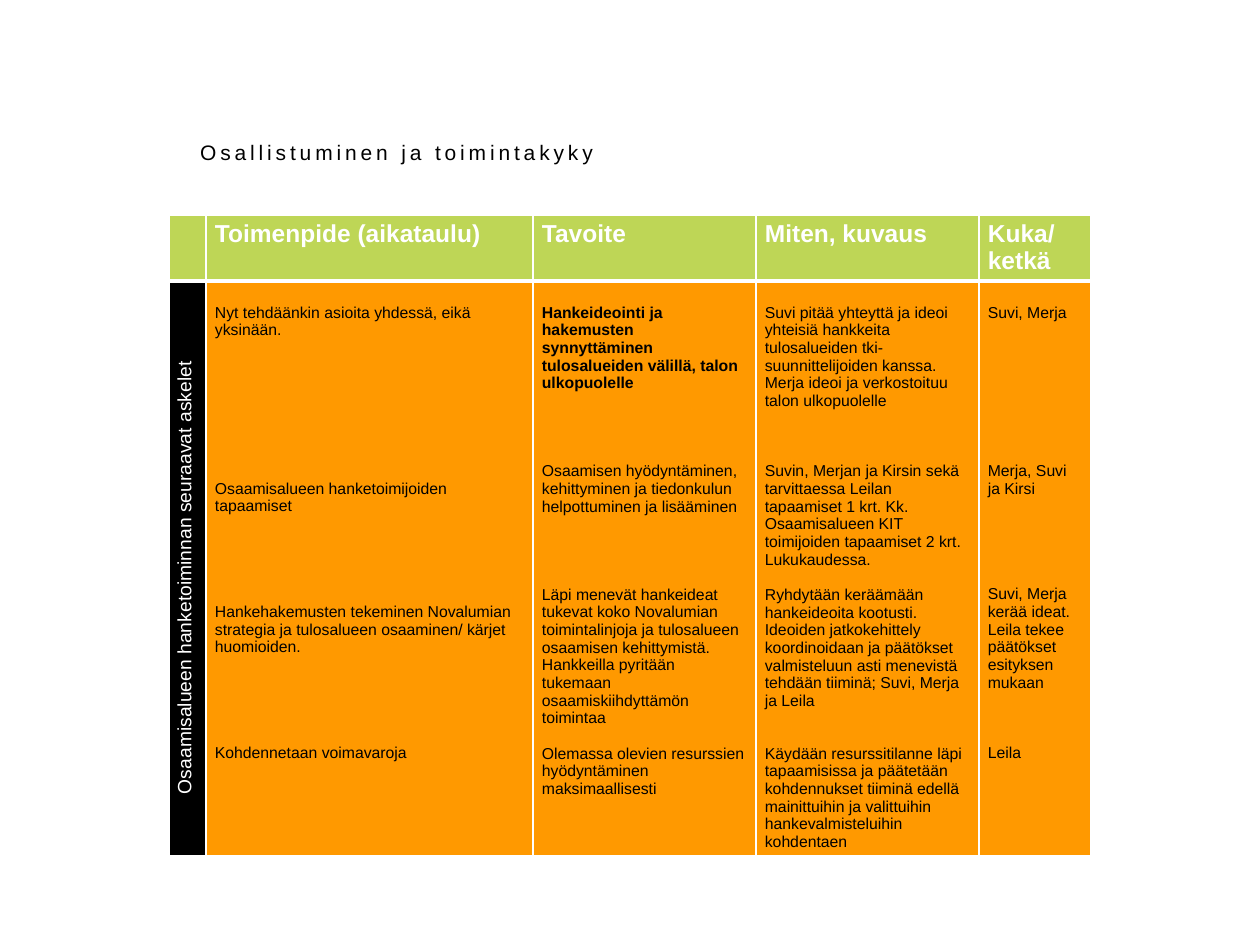
from lxml.etree import SubElement
from pptx import Presentation
from pptx.dml.color import RGBColor
from pptx.enum.text import MSO_ANCHOR, PP_ALIGN
from pptx.oxml.ns import qn
from pptx.util import Pt

PX = 914400 // 126
WHITE = RGBColor(0xFF, 0xFF, 0xFF)
BLACK = RGBColor(0x00, 0x00, 0x00)
LIME = RGBColor(0xBE, 0xD6, 0x56)
ORANGE = RGBColor(0xFF, 0x99, 0x00)

TITLE = "Osallistuminen ja toimintakyky"
SIDE_LABEL = "Osaamisalueen hanketoiminnan seuraavat askelet"
HEADINGS = [
    [],
    ["Toimenpide (aikataulu)"],
    ["Tavoite"],
    ["Miten, kuvaus"],
    ["Kuka/", "ketkä"],
]
COLUMN_WIDTHS = [37, 327, 223, 223, 112]
ROW_HEIGHTS = [66, 573]
LINE_POINTS = 10.05

# Each step is (empty lines above, wording).
STEPS = [
    [
        (0, "Nyt tehdäänkin asioita yhdessä, eikä yksinään."),
        (8, "Osaamisalueen hanketoimijoiden tapaamiset"),
        (5, "Hankehakemusten tekeminen Novalumian strategia ja tulosalueen "
            "osaaminen/ kärjet huomioiden."),
        (5, "Kohdennetaan voimavaroja"),
    ],
    [
        (0, "Hankeideointi ja hakemusten synnyttäminen tulosalueiden välillä, "
            "talon ulkopuolelle"),
        (4, "Osaamisen hyödyntäminen, kehittyminen ja tiedonkulun "
            "helpottuminen ja lisääminen"),
        (4, "Läpi menevät hankeideat tukevat koko Novalumian toimintalinjoja "
            "ja tulosalueen osaamisen kehittymistä. Hankkeilla pyritään "
            "tukemaan osaamiskiihdyttämön toimintaa"),
        (1, "Olemassa olevien resurssien hyödyntäminen maksimaallisesti"),
    ],
    [
        (0, "Suvi pitää yhteyttä ja ideoi yhteisiä hankkeita tulosalueiden "
            "tki-suunnittelijoiden kanssa. Merja ideoi ja verkostoituu talon "
            "ulkopuolelle"),
        (3, "Suvin, Merjan ja Kirsin sekä tarvittaessa Leilan tapaamiset "
            "1 krt. Kk. Osaamisalueen KIT toimijoiden tapaamiset 2 krt. "
            "Lukukaudessa."),
        (1, "Ryhdytään keräämään hankeideoita kootusti. Ideoiden "
            "jatkokehittely koordinoidaan ja päätökset valmisteluun asti "
            "menevistä tehdään tiiminä; Suvi, Merja ja Leila"),
        (2, "Käydään resurssitilanne läpi tapaamisissa ja päätetään "
            "kohdennukset tiiminä edellä mainittuihin ja valittuihin "
            "hankevalmisteluihin kohdentaen"),
    ],
    [
        (0, "Suvi, Merja"),
        (8, "Merja, Suvi ja Kirsi"),
        (5, "Suvi, Merja kerää ideat. Leila tekee päätökset esityksen mukaan"),
        (3, "Leila"),
    ],
]


def px(length):
    return length * PX


def apply(target, values):
    for name, value in values.items():
        setattr(target, name, value)


def write(paragraph, wording, size, color, bold=False):
    run = paragraph.add_run()
    run.text = wording
    apply(run.font, {"name": "Arial", "size": Pt(size), "bold": bold})
    run.font.color.rgb = color
    return run


def add_title(slide):
    box = slide.shapes.add_textbox(px(94), px(125), px(606), px(54))
    apply(box.text_frame, {"word_wrap": True,
                           "vertical_anchor": MSO_ANCHOR.MIDDLE})
    paragraph = box.text_frame.paragraphs[0]
    paragraph.alignment = PP_ALIGN.CENTER
    heading = write(paragraph, TITLE, 12, BLACK)
    heading.font._element.set("spc", "220")


def style_cell(cell, fill, bottom_width=1, top_margin=5):
    apply(cell, {"margin_left": px(9), "margin_right": px(9),
                 "margin_top": px(top_margin), "margin_bottom": px(5)})
    properties = cell._tc.get_or_add_tcPr()
    borders = {"lnL": 1, "lnR": 1, "lnT": 1, "lnB": bottom_width}
    for side, width in borders.items():
        line = SubElement(properties, qn(f"a:{side}"), w=str(Pt(width)))
        solid = SubElement(line, qn("a:solidFill"))
        SubElement(solid, qn("a:srgbClr"), val=str(WHITE))
    cell.fill.solid()
    cell.fill.fore_color.rgb = fill


def paragraph_at(cell, index):
    frame = cell.text_frame
    return frame.add_paragraph() if index else frame.paragraphs[0]


def fill_heading(cell, lines):
    style_cell(cell, LIME, bottom_width=3)
    for index, line in enumerate(lines):
        write(paragraph_at(cell, index), line, 14, WHITE, bold=True)


def fill_side_label(cell):
    style_cell(cell, BLACK)
    cell._tc.get_or_add_tcPr().set("vert", "vert270")
    paragraph = cell.text_frame.paragraphs[0]
    paragraph._p.get_or_add_pPr().set("marL", str(px(53)))
    write(paragraph, SIDE_LABEL, 11, WHITE)


def fill_steps(cell, steps, bold_first):
    style_cell(cell, ORANGE, top_margin=23)
    for index, (empty_lines, wording) in enumerate(steps):
        paragraph = paragraph_at(cell, index)
        if empty_lines:
            paragraph.space_before = Pt(empty_lines * LINE_POINTS)
        write(paragraph, wording, 9, BLACK, bold_first and index == 0)


def add_plan(slide):
    frame = slide.shapes.add_table(
        len(ROW_HEIGHTS), len(COLUMN_WIDTHS), px(169), px(215),
        px(sum(COLUMN_WIDTHS)), px(sum(ROW_HEIGHTS)))
    plan = frame.table
    apply(plan, {"first_row": False, "horz_banding": False})
    for column, width in zip(plan.columns, COLUMN_WIDTHS):
        column.width = px(width)
    for row, height in zip(plan.rows, ROW_HEIGHTS):
        row.height = px(height)
    for index, lines in enumerate(HEADINGS):
        fill_heading(plan.cell(0, index), lines)
    fill_side_label(plan.cell(1, 0))
    for index, steps in enumerate(STEPS, 1):
        fill_steps(plan.cell(1, index), steps, HEADINGS[index] == ["Tavoite"])


def main():
    presentation = Presentation()
    apply(presentation, {"slide_width": px(1260), "slide_height": px(945)})
    slide = presentation.slides.add_slide(presentation.slide_layouts[6])
    add_plan(slide)
    add_title(slide)
    presentation.save("out.pptx")


if __name__ == "__main__":
    main()
